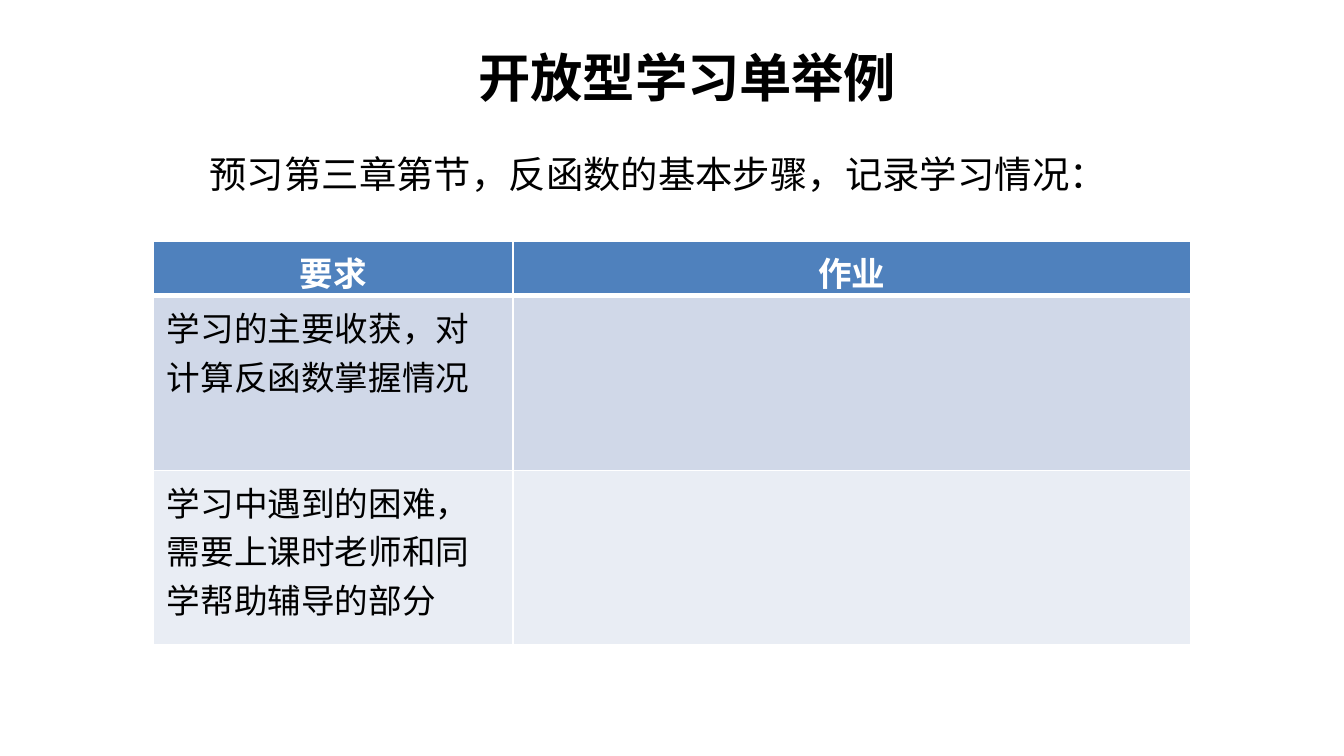
from lxml import etree
from pptx import Presentation
from pptx.dml.color import RGBColor
from pptx.enum.text import PP_ALIGN
from pptx.oxml.ns import qn
from pptx.util import Cm, Pt

LEFT, CENTER = PP_ALIGN.LEFT, PP_ALIGN.CENTER
BLACK = RGBColor(0x00, 0x00, 0x00)
WHITE = RGBColor(0xFF, 0xFF, 0xFF)
HEADER_BLUE = RGBColor(0x4F, 0x81, 0xBD)
BANDS = (RGBColor(0xD0, 0xD8, 0xE8), RGBColor(0xE9, 0xED, 0xF4))

COL_WIDTHS = (6.8, 12.8)
ROW_HEIGHTS = (1.04, 3.3, 3.3)
ROWS = (
    ("要求", "作业"),
    ("学习的主要收获，对计算反函数掌握情况", ""),
    ("学习中遇到的困难，需要上课时老师和同学帮助辅导的部分", ""),
)


def write(tf, text, size=18, color=BLACK, bold=False, align=LEFT, font="Calibri"):
    p = tf.paragraphs[0]
    p.alignment = align
    r = p.add_run()
    r.text = text
    r.font.name = font
    r.font.size = Pt(size)
    r.font.bold = bold
    r.font.color.rgb = color


def set_borders(cell, color, **widths):
    """Draw cell borders; widths are points keyed by L, R, T and B, in that order."""
    tc_pr = cell._tc.get_or_add_tcPr()
    for side, width in widths.items():
        ln = etree.SubElement(tc_pr, qn(f"a:ln{side}"), w=str(Pt(width)))
        fill = etree.SubElement(ln, qn("a:solidFill"))
        etree.SubElement(fill, qn("a:srgbClr"), val=str(color))


class SlideBuilder:
    def __init__(self, slide):
        self.slide = slide

    def text(self, text, left, top, width, height, **style):
        sp = self.slide.shapes.add_textbox(Cm(left), Cm(top), Cm(width), Cm(height))
        sp.text_frame.word_wrap = True
        write(sp.text_frame, text, **style)

    def table(self, rows, left, top, col_widths, row_heights):
        table = self.slide.shapes.add_table(
            len(rows), len(col_widths), Cm(left), Cm(top),
            Cm(sum(col_widths)), Cm(sum(row_heights))).table
        for col, width in zip(table.columns, col_widths):
            col.width = Cm(width)
        for i, (row, height) in enumerate(zip(rows, row_heights)):
            table.rows[i].height = Cm(height)
            for j, text in enumerate(row):
                self.cell(table.cell(i, j), text, i)

    def cell(self, cell, text, row):
        header = row == 0
        set_borders(cell, WHITE, L=1, R=1, T=3 if row == 1 else 1, B=3 if header else 1)
        cell.fill.solid()
        cell.fill.fore_color.rgb = HEADER_BLUE if header else BANDS[(row - 1) % 2]
        if header:
            cell.margin_bottom = 0
            write(cell.text_frame, text, color=WHITE, bold=True, align=CENTER)
        elif text:
            write(cell.text_frame, text)


def main():
    prs = Presentation()
    prs.slide_width, prs.slide_height = Cm(25.4), Cm(14.29)
    s = SlideBuilder(prs.slides.add_slide(prs.slide_layouts[6]))
    s.text("开放型学习单举例", 7.29, 0.74, 11.4, 1.45, size=28, bold=True, align=CENTER)
    s.table(ROWS, 2.9, 4.55, COL_WIDTHS, ROW_HEIGHTS)
    s.text("预习第三章第节，反函数的基本步骤，记录学习情况：", 3.71, 2.74, 18.21, 1.12, size=20)
    prs.save("out.pptx")


if __name__ == "__main__":
    main()
